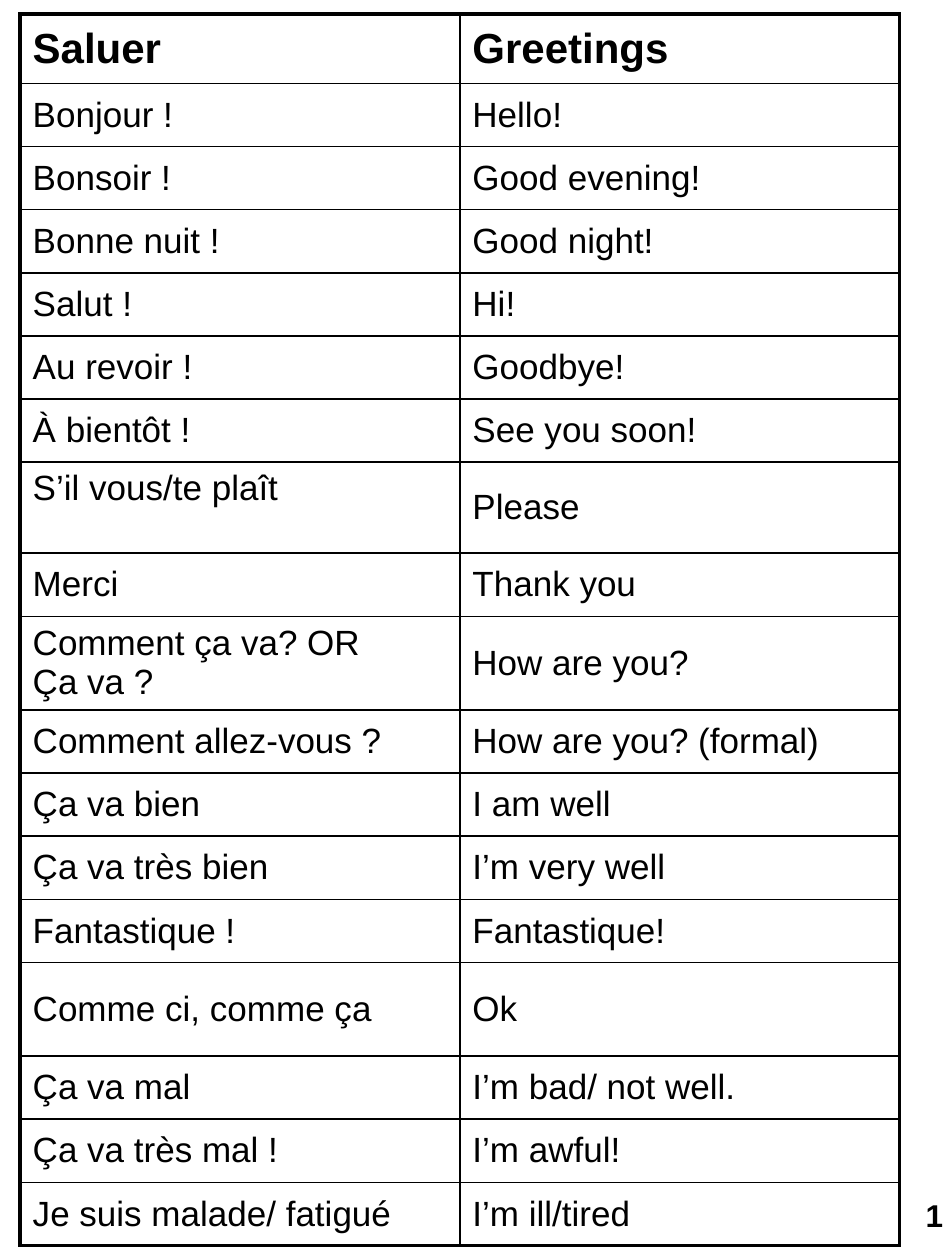
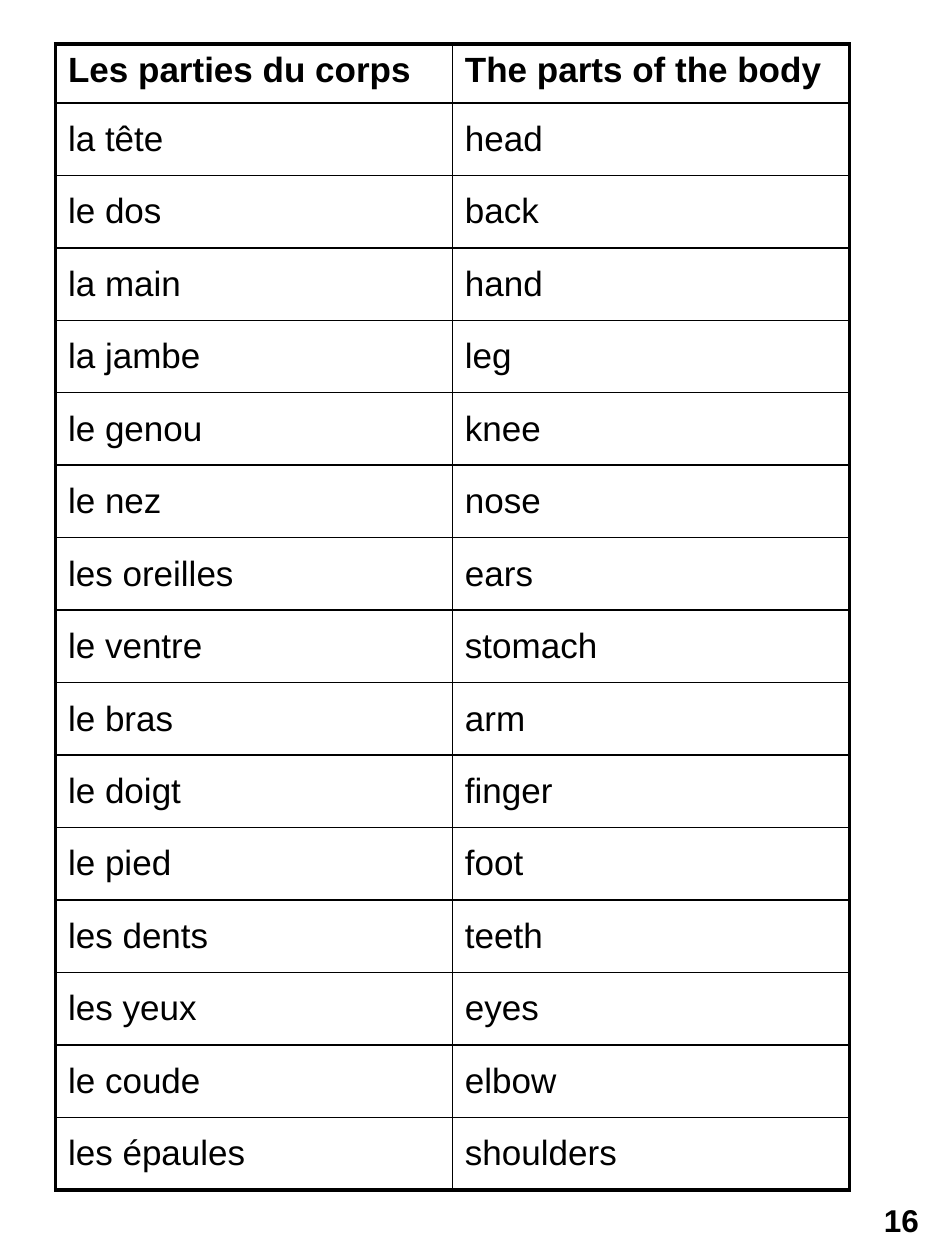
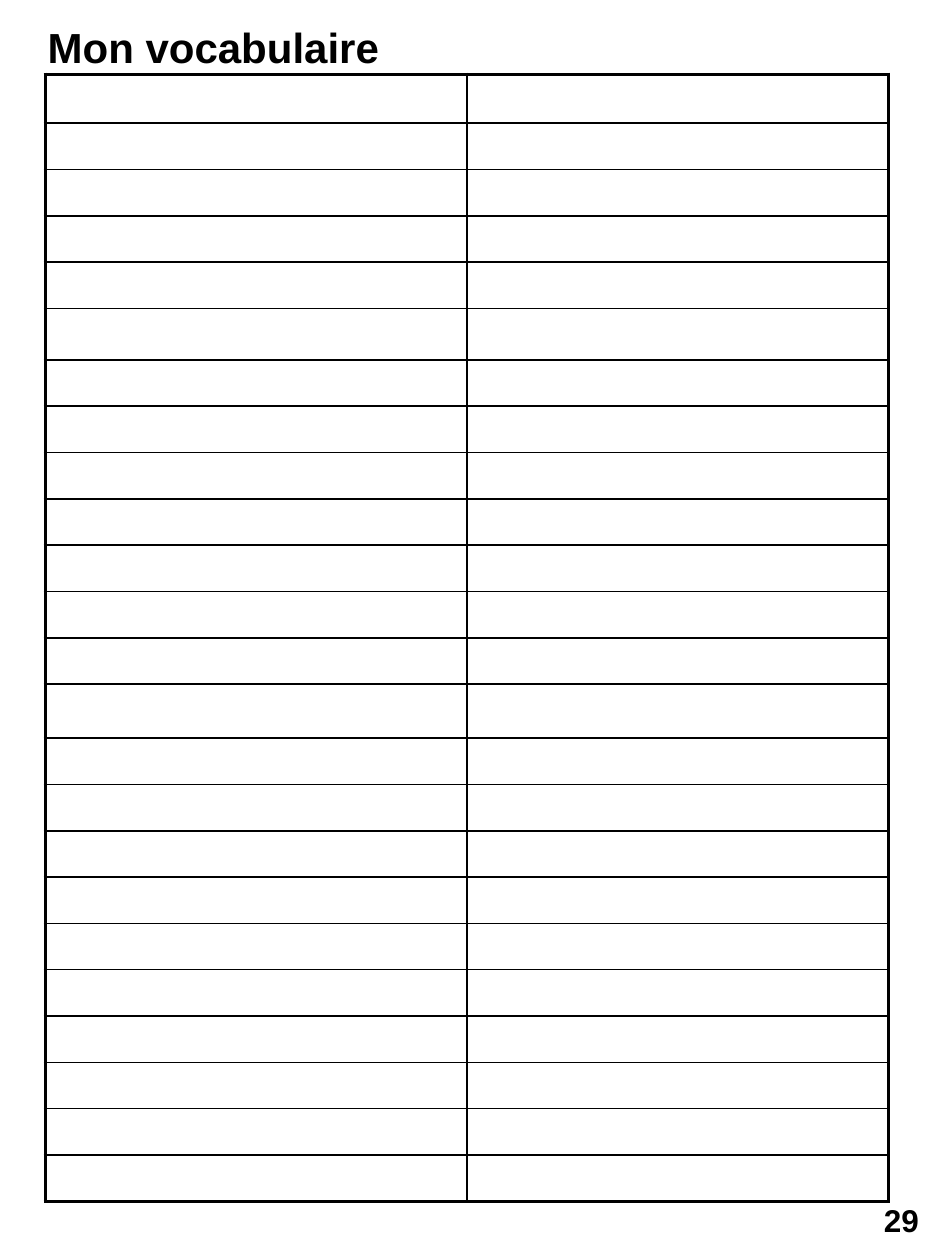
from dataclasses import dataclass

from lxml.etree import SubElement
from pptx import Presentation
from pptx.dml.color import RGBColor
from pptx.enum.shapes import MSO_SHAPE as Preset
from pptx.enum.text import MSO_ANCHOR as Anchor, PP_ALIGN as Align
from pptx.oxml import parse_xml
from pptx.oxml.ns import nsdecls, qn
from pptx.util import Inches, Pt

COLOURS = {"ink": "000000", "paper": "FFFFFF"}
FONT = "Arial"
SLIDE_WIDTH, SLIDE_HEIGHT = Inches(7.5), Inches(10)
GRID_COLUMNS, GRID_ROWS = 750, 1000
OUTER_LINE, INNER_LINE = Pt(2.25), Pt(1)
EMPTY_SIZE = 12


@dataclass(frozen=True)
class Frame:
    """A rectangle in columns and rows of the slide grid."""
    left: int
    top: int
    width: int
    height: int

    def lengths(self) -> tuple[int, int, int, int]:
        """Return left, top, width and height as slide lengths."""
        column, row = SLIDE_WIDTH / GRID_COLUMNS, SLIDE_HEIGHT / GRID_ROWS
        return (round(self.left * column), round(self.top * row),
                round(self.width * column), round(self.height * row))


@dataclass(frozen=True)
class VocabularyPage:
    """One page: a two-column word table, its page number and a title."""
    number: int
    table: Frame
    number_box: Frame
    words: list[tuple[str, str]]
    usual_height: int
    special_heights: dict[int, int]
    header_size: int = 20
    header_anchor: Anchor = Anchor.MIDDLE
    top_cells: tuple[tuple[int, int], ...] = ()
    title: str = ""


TITLE_BOX = Frame(28, 12, 286, 50)
CORNER_BOX = Frame(688, 945, 55, 47)

GREETINGS = [
    ("Saluer", "Greetings"),
    ("Bonjour !", "Hello!"),
    ("Bonsoir !", "Good evening!"),
    ("Bonne nuit !", "Good night!"),
    ("Salut !", "Hi!"),
    ("Au revoir !", "Goodbye!"),
    ("À bientôt !", "See you soon!"),
    ("S’il vous/te plaît", "Please"),
    ("Merci", "Thank you"),
    ("Comment ça va? OR \vÇa va ?", "How are you?"),
    ("Comment allez-vous ?", "How are you? (formal)"),
    ("Ça va bien", "I am well"),
    ("Ça va très bien", "I’m very well"),
    ("Fantastique !", "Fantastique!"),
    ("Comme ci, comme ça", "Ok"),
    ("Ça va mal", "I’m bad/ not well."),
    ("Ça va très mal !", "I’m awful!"),
    ("Je suis malade/ fatigué", "I’m ill/tired"),
]
BODY_PARTS = [
    ("Les parties du corps", "The parts of the body"),
    ("la tête", "head"),
    ("le dos", "back"),
    ("la main", "hand"),
    ("la jambe", "leg"),
    ("le genou", "knee"),
    ("le nez", "nose"),
    ("les oreilles", "ears"),
    ("le ventre", "stomach"),
    ("le bras", "arm"),
    ("le doigt", "finger"),
    ("le pied", "foot"),
    ("les dents", "teeth"),
    ("les yeux", "eyes"),
    ("le coude", "elbow"),
    ("les épaules", "shoulders"),
]

PAGES = [
    VocabularyPage(1, Frame(16, 11, 698, 978), Frame(714, 941, 55, 47), GREETINGS,
                   50, {0: 55, 7: 72, 9: 74, 14: 74},
                   header_size=24, top_cells=((7, 0),)),
    VocabularyPage(16, Frame(44, 35, 630, 910), CORNER_BOX, BODY_PARTS,
                   58, {0: 47}, header_anchor=Anchor.TOP),
    VocabularyPage(29, Frame(36, 59, 669, 895), CORNER_BOX, [("", "")] * 24,
                   37, {0: 39, 5: 41, 13: 43}, title="Mon vocabulaire"),
]


def write_text(text_frame, text: str, *, size: int, bold: bool = False,
               align: Align = Align.LEFT, anchor: Anchor = Anchor.MIDDLE,
               wrap: bool = True) -> None:
    """Fill a text frame with one formatted paragraph."""
    text_frame.word_wrap = wrap
    text_frame.vertical_anchor = anchor
    para = text_frame.paragraphs[0]
    para.text = text
    para.alignment = align
    for span in para.runs:
        span.font.name = FONT
        span.font.size = Pt(size)
        span.font.bold = bold
        span.font.color.rgb = RGBColor.from_string(COLOURS["ink"])


def draw_borders(cell, widths: dict[str, int]) -> None:
    """Draw the sides of a cell, given in the order L, R, T, B."""
    properties = cell._tc.get_or_add_tcPr()
    for position, (side, width) in enumerate(widths.items()):
        line = parse_xml(f'<a:ln{side} {nsdecls("a")} w="{width}"/>')
        fill = SubElement(line, qn("a:solidFill"))
        SubElement(fill, qn("a:srgbClr"), val=COLOURS["ink"])
        properties.insert(position, line)


def add_word_table(slide, page: VocabularyPage) -> None:
    """Add the word table with a heavy frame and fine inner lines."""
    last_row = len(page.words) - 1
    left, top, width, height = page.table.lengths()
    table = slide.shapes.add_table(last_row + 1, 2, left, top, width, height).table
    table.first_row = table.horz_banding = False
    shares = [page.special_heights.get(row, page.usual_height)
              for row in range(last_row + 1)]
    for row, (pair, share) in enumerate(zip(page.words, shares)):
        table.rows[row].height = round(height * share / sum(shares))
        for column, word in enumerate(pair):
            cell = table.cell(row, column)
            cell.fill.background()
            outer = {"L": column == 0, "R": column == 1,
                     "T": row == 0, "B": row == last_row}
            draw_borders(cell, {side: OUTER_LINE if edge else INNER_LINE
                                for side, edge in outer.items()})
            if not word:
                ending = cell.text_frame.paragraphs[0]._p.get_or_add_endParaRPr()
                ending.set("sz", str(EMPTY_SIZE * 100))
                continue
            header = row == 0
            write_text(cell.text_frame, word, bold=header,
                       size=page.header_size if header else 20)
            at_top = (row, column) in page.top_cells
            cell.vertical_anchor = (page.header_anchor if header
                                    else Anchor.TOP if at_top else Anchor.MIDDLE)
            cell.text_frame._txBody.bodyPr.attrib.clear()


def add_page_number(slide, page: VocabularyPage) -> None:
    """Add the page number in an unfilled rounded box."""
    box = slide.shapes.add_shape(Preset.ROUNDED_RECTANGLE, *page.number_box.lengths())
    box.shadow.inherit = False
    box.fill.background()
    box.line.fill.background()
    write_text(box.text_frame, str(page.number), size=18, bold=True, align=Align.CENTER)


def add_title(slide, title: str) -> None:
    """Add the title above the table."""
    box = slide.shapes.add_textbox(*TITLE_BOX.lengths())
    write_text(box.text_frame, title, size=24, bold=True, wrap=False)


def build_page(deck, page: VocabularyPage) -> None:
    """Add one vocabulary page to the deck."""
    slide = deck.slides.add_slide(deck.slide_layouts[6])
    slide.background.fill.solid()
    slide.background.fill.fore_color.rgb = RGBColor.from_string(COLOURS["paper"])
    add_word_table(slide, page)
    if page.title:
        add_title(slide, page.title)
    add_page_number(slide, page)


def main() -> None:
    """Build the deck and save it."""
    deck = Presentation()
    deck.slide_width, deck.slide_height = SLIDE_WIDTH, SLIDE_HEIGHT
    for page in PAGES:
        build_page(deck, page)
    deck.save("out.pptx")


if __name__ == "__main__":
    main()
